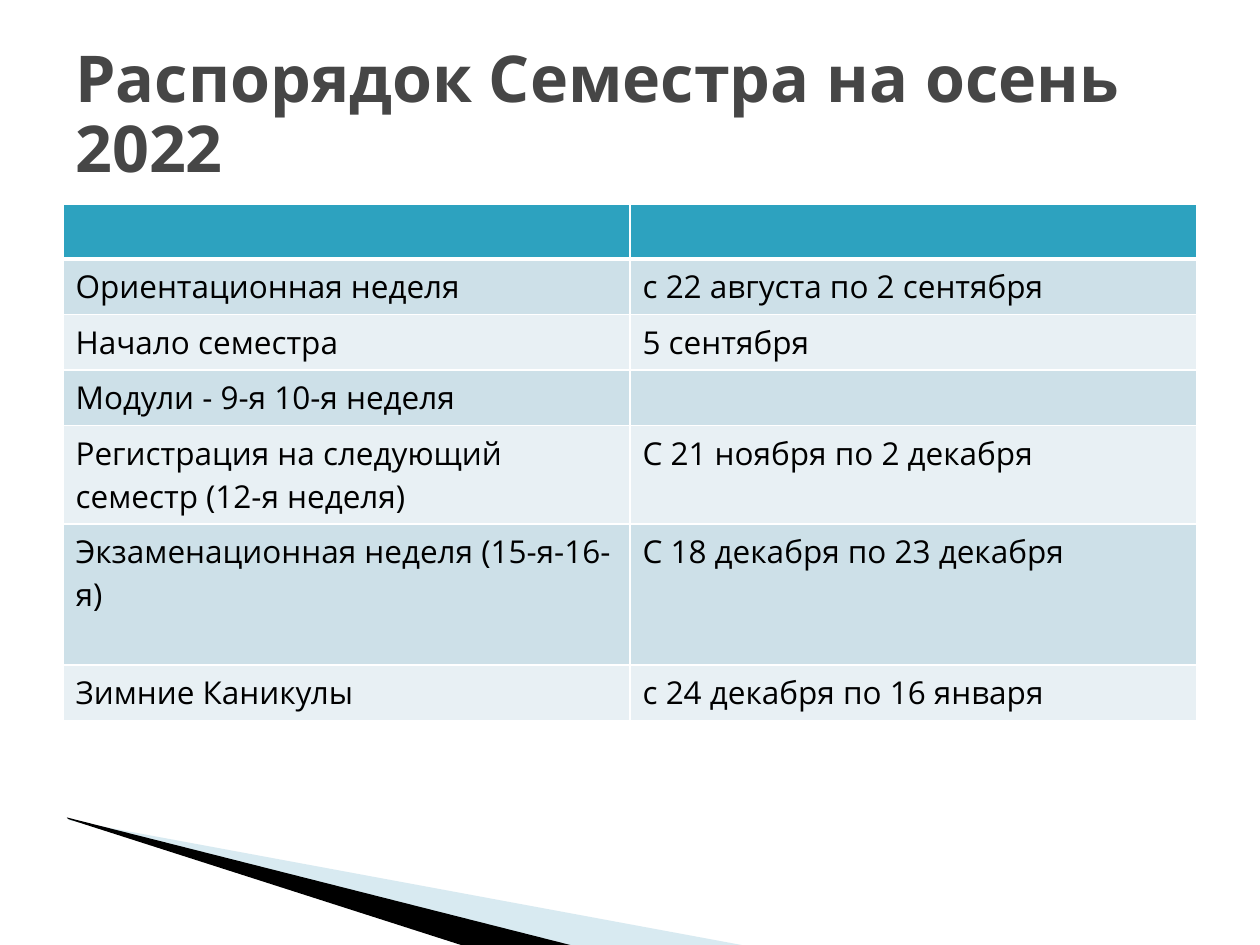
from lxml import etree
from pptx import Presentation
from pptx import util as u
from pptx.dml.color import RGBColor
from pptx.enum import text
from pptx.oxml import ns

SCHEDULE = [
    ("", "", 1.11),
    ("Ориентационная неделя", "с 22 августа по 2 сентября", 1.12),
    ("Начало семестра", "5 сентября", 1.12),
    ("Модули - 9-я 10-я неделя", "", 1.12),
    ("Регистрация на следующий семестр (12-я неделя)", "С 21 ноября по 2 декабря", 1.98),
    ("Экзаменационная неделя (15-я-16-я)", "С 18 декабря по 23 декабря", 2.84),
    ("Зимние Каникулы", "с 24 декабря по 16 января", 1.12),
]
HEADER_FILL = "2DA2BF"
BAND_FILLS = ["E8F0F4", "CDE0E8"]
BODY = {"name": "Open Sans", "size": u.Pt(18), "bold": False, "color": "000000"}
TITLE = {"name": "Open Sans", "size": u.Pt(36.9), "bold": True, "color": "464646"}


def rgb(value):
    return RGBColor.from_string(value)


def add_child(parent, tag, **attributes):
    return etree.SubElement(parent, ns.qn(tag), attributes)


class SlideBuilder:
    def __init__(self, slide):
        self.slide = slide

    def span(self, para, words, style):
        span = para.add_run()
        span.text = words
        for key, value in style.items():
            if key == "color":
                span.font.color.rgb = rgb(value)
            else:
                setattr(span.font, key, value)

    def wedge(self, points, color, opacity=None):
        corners = [(u.Cm(x), u.Cm(y)) for x, y in points]
        builder = self.slide.shapes.build_freeform(*corners[0])
        builder.add_line_segments(corners[1:], close=True)
        shape = builder.convert_to_shape()
        shape.shadow.inherit = False
        shape.fill.solid()
        shape.fill.fore_color.rgb = rgb(color)
        shape.line.fill.background()
        if opacity is not None:
            color_node = shape._element.spPr.find(".//" + ns.qn("a:srgbClr"))
            add_child(color_node, "a:alpha", val=str(opacity * 1000))

    def title(self, words, left, top, width, height):
        box = self.slide.shapes.add_textbox(*map(u.Cm, (left, top, width, height)))
        frame = box.text_frame
        frame.word_wrap = True
        frame.vertical_anchor = text.MSO_ANCHOR.MIDDLE
        para = frame.paragraphs[0]
        para.line_spacing = 0.9
        self.span(para, words, TITLE)

    def cell(self, cell, words, fill, widths):
        properties = cell._tc.get_or_add_tcPr()
        for side, width in widths.items():
            line = add_child(properties, f"a:ln{side}", w=str(u.Pt(width)))
            add_child(add_child(line, "a:solidFill"), "a:srgbClr", val="FFFFFF")
        cell.fill.solid()
        cell.fill.fore_color.rgb = rgb(fill)
        if words:
            self.span(cell.text_frame.paragraphs[0], words, BODY)

    def table(self, rows, left, top, width):
        height = sum(row[-1] for row in rows)
        frame = self.slide.shapes.add_table(
            len(rows), 2, *map(u.Cm, (left, top, width, height)))
        table = frame.table
        for index, (event, dates, row_height) in enumerate(rows):
            table.rows[index].height = u.Cm(row_height)
            fill = BAND_FILLS[index % 2] if index else HEADER_FILL
            widths = {"L": 1, "R": 1, "T": 3 if index == 1 else 1, "B": 1 if index else 3}
            for column, words in enumerate((event, dates)):
                self.cell(table.cell(index, column), words, fill, widths)


def main():
    deck = Presentation()
    deck.slide_width, deck.slide_height = u.Cm(25.4), u.Cm(19.05)
    page = SlideBuilder(deck.slides.add_slide(deck.slide_layouts[6]))
    page.wedge([(1.4, 16.54), (15.11, 19.08), (11.58, 19.08), (1.4, 16.51)], "9FCBDC", 40)
    page.wedge([(1.35, 16.48), (11.61, 19.08), (9.45, 19.1), (1.37, 16.51)], "000000")
    page.table(SCHEDULE, 1.27, 4.11, 22.86)
    page.title("Распорядок Семестра на осень 2022", 1.27, 0.76, 22.86, 3.18)
    deck.save("out.pptx")


if __name__ == "__main__":
    main()
